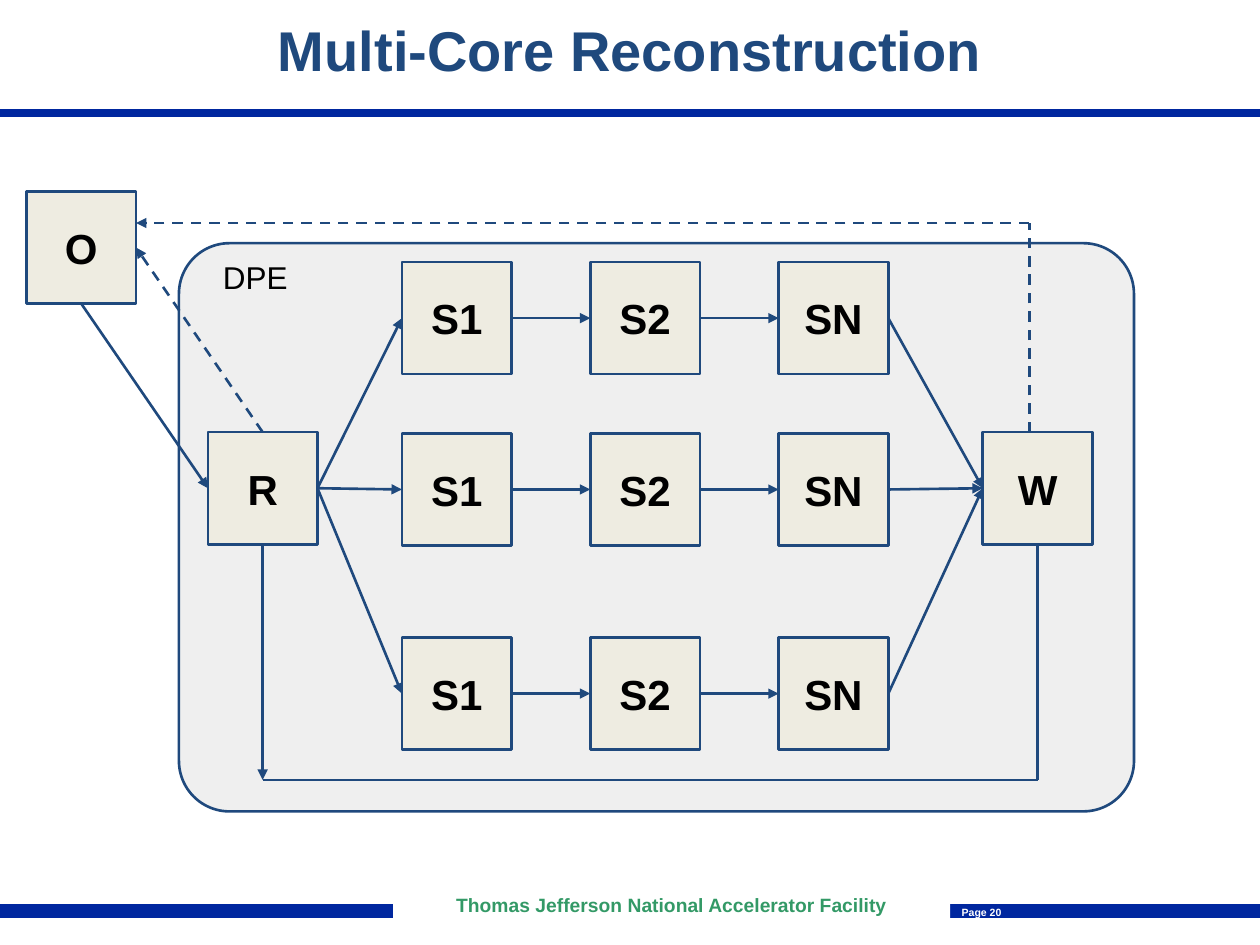
from itertools import pairwise

from lxml import etree
from pptx import Presentation
from pptx.dml.color import RGBColor
from pptx.enum import dml, shapes, text
from pptx.oxml import ns
from pptx.util import Inches, Pt

NAVY = RGBColor(0x1F, 0x49, 0x7D)
BAR = RGBColor(0x00, 0x27, 0x9F)
GREEN = RGBColor(0x33, 0x99, 0x66)
CREAM = RGBColor(0xEE, 0xEC, 0xE1)
GREY = RGBColor(0xEF, 0xEF, 0xEF)
WHITE = RGBColor(0xFF, 0xFF, 0xFF)
BLACK = RGBColor(0, 0, 0)

TITLE = "Multi-Core Reconstruction"
FACILITY = "Thomas Jefferson National Accelerator Facility"
PAGE = "Page 20"
DOMAIN = "DPE"
SERVICES = ["S1", "S2", "SN"]
CHAIN_TOPS = [2.08, 3.44, 5.06]
CHAIN_LEFT, CHAIN_STEP = 3.19, 1.495
ENDPOINTS = {"O": (0.21, 1.52), "R": (1.65, 3.43), "W": (7.8, 3.43)}
NODE_W, NODE_H = 0.87, 0.89
RETURN_Y = 6.19
REPORT_X, REPORT_Y = 8.17, 1.77
TOP, LEFT, BOTTOM, RIGHT = range(4)

prs = Presentation()
prs.slide_width, prs.slide_height = Inches(10), Inches(7.5)
slide = prs.slides.add_slide(prs.slide_layouts[5])


def write(sp, content, size, color, bold=True, inset=0.1,
          align=text.PP_ALIGN.CENTER, anchor=text.MSO_ANCHOR.MIDDLE):
    tf = sp.text_frame
    tf.word_wrap = True
    tf.auto_size = text.MSO_AUTO_SIZE.NONE
    tf.vertical_anchor = anchor
    tf.margin_left = tf.margin_right = Inches(inset)
    tf.margin_top = tf.margin_bottom = Inches(inset)
    p = tf.paragraphs[0]
    p.text = content
    p.alignment = align
    p.font.name, p.font.size, p.font.bold = "Arial", Pt(size), bold
    p.font.color.rgb = color


def add_box(x, y, w, h, fill, line=None, kind=shapes.MSO_SHAPE.RECTANGLE):
    sp = slide.shapes.add_shape(kind, Inches(x), Inches(y), Inches(w), Inches(h))
    sp.shadow.inherit = False
    sp.fill.solid()
    sp.fill.fore_color.rgb = fill
    if line is None:
        sp.line.fill.background()
    else:
        sp.line.color.rgb = line
        sp.line.width = Pt(1.5)
    return sp


def add_label(x, y, w, h, *args, **kwargs):
    sp = slide.shapes.add_textbox(Inches(x), Inches(y), Inches(w), Inches(h))
    write(sp, *args, **kwargs)
    return sp


def add_node(name, x, y):
    sp = add_box(x, y, NODE_W, NODE_H, CREAM, NAVY)
    write(sp, name, 24, BLACK)
    return sp


def side_point(sp, side):
    dx, dy = [(0.5, 0), (0, 0.5), (0.5, 1), (1, 0.5)][side]
    return sp.left + int(sp.width * dx), sp.top + int(sp.height * dy)


def add_line(start, end, arrow=True, dash=False, color=NAVY, width=1.5):
    joins = [isinstance(end_spec[0], float) or isinstance(end_spec[0], int)
             for end_spec in (start, end)]
    points = [(Inches(e[0]), Inches(e[1])) if free else side_point(*e)
              for e, free in zip((start, end), joins)]
    cx = slide.shapes.add_connector(shapes.MSO_CONNECTOR.STRAIGHT, *points[0], *points[1])
    if not joins[0]:
        cx.begin_connect(*start)
    if not joins[1]:
        cx.end_connect(*end)
    cx.line.color.rgb = color
    cx.line.width = Pt(width)
    if dash:
        cx.line.dash_style = dml.MSO_LINE.DASH
    if arrow:
        etree.SubElement(cx.line._get_or_add_ln(), ns.qn("a:tailEnd"), type="triangle")
    etree.SubElement(cx._element.spPr, ns.qn("a:effectLst"))


for y, width in [(0.9, 4.5), (7.23, 8)]:
    add_line((0, y), (10, y), arrow=False, color=BAR, width=width)
write(add_box(3.12, 6.97, 4.42, 0.42, WHITE), FACILITY, 11, GREEN, inset=0)
page = add_label(7.63, 7.19, 0.32, 0.1, PAGE, 6, WHITE, inset=0)
page.text_frame.word_wrap = False

domain = add_box(1.42, 1.93, 7.58, 4.51, GREY, NAVY, shapes.MSO_SHAPE.ROUNDED_RECTANGLE)
domain.adjustments[0] = 0.089

title = slide.shapes.title
title.left, title.top = 0, Inches(0.06)
title.width, title.height = prs.slide_width, Inches(0.7)
write(title, TITLE, 32, NAVY, anchor=text.MSO_ANCHOR.BOTTOM)

orchestrator, reader, writer = [add_node(n, *at) for n, at in ENDPOINTS.items()]
for y in CHAIN_TOPS:
    chain = [add_node(name, CHAIN_LEFT + i * CHAIN_STEP, y)
             for i, name in enumerate(SERVICES)]
    for a, b in pairwise([reader, *chain, writer]):
        add_line((a, RIGHT), (b, LEFT))

reader_x, writer_x = [ENDPOINTS[n][0] + NODE_W / 2 for n in "RW"]
add_line((writer, BOTTOM), (writer_x, RETURN_Y), arrow=False)
add_line((reader, BOTTOM), (reader_x, RETURN_Y))
add_line((writer_x, RETURN_Y), (reader_x, RETURN_Y), arrow=False)

add_line((orchestrator, BOTTOM), (reader, LEFT))
add_line((reader, TOP), (orchestrator, RIGHT), dash=True)
add_line((REPORT_X, REPORT_Y), (ENDPOINTS["O"][0] + NODE_W, REPORT_Y), dash=True)
add_line((REPORT_X, ENDPOINTS["W"][1]), (REPORT_X, REPORT_Y), arrow=False, dash=True)

add_label(1.67, 1.95, 0.75, 0.33, DOMAIN, 18, BLACK, bold=False,
          align=text.PP_ALIGN.LEFT, anchor=text.MSO_ANCHOR.TOP)

prs.save("out.pptx")
